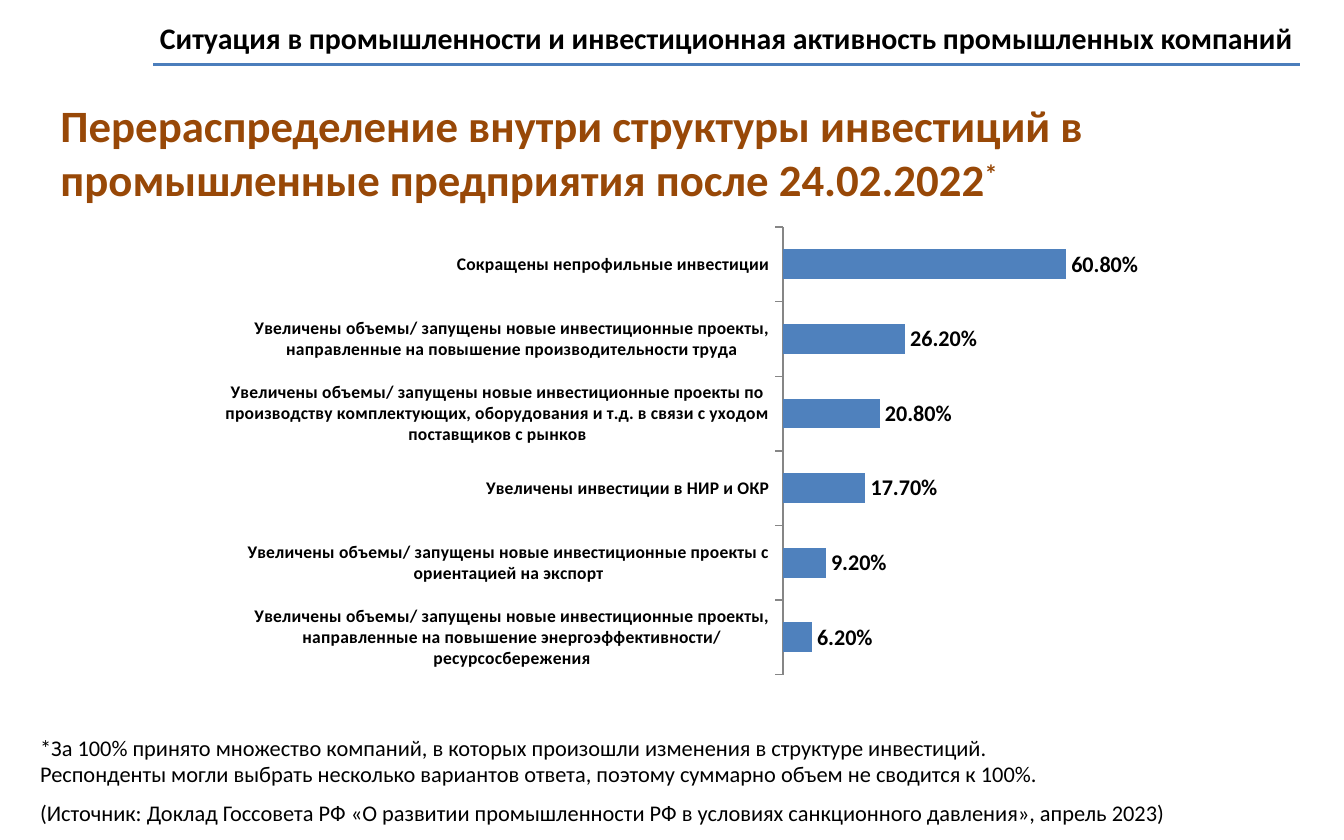
import lxml.etree
import pptx
import pptx.chart.data
import pptx.dml.color
import pptx.enum.chart
import pptx.enum.shapes
import pptx.enum.text
import pptx.oxml.ns
import pptx.util

PX = pptx.util.Inches(1) // 100
FONT = "Calibri"
BLACK = "000000"
BLUE = "4F81BD"
LINE_BLUE = "4B7EBC"
BROWN = "984807"
AXIS_GREY = "868686"
LEFT = pptx.enum.text.PP_ALIGN.LEFT
RIGHT = pptx.enum.text.PP_ALIGN.RIGHT

CHART_ROWS = [
    ("Сокращены непрофильные инвестиции", 0.608),
    ("Увеличены объемы/ запущены новые инвестиционные проекты, "
     "направленные на повышение производительности труда", 0.262),
    ("Увеличены объемы/ запущены новые инвестиционные проекты по "
     "производству комплектующих, оборудования и т.д. в связи с уходом "
     "поставщиков с рынков", 0.208),
    ("Увеличены инвестиции в НИР и ОКР", 0.177),
    ("Увеличены объемы/ запущены новые инвестиционные проекты с "
     "ориентацией на экспорт", 0.092),
    ("Увеличены объемы/ запущены новые инвестиционные проекты, "
     "направленные на повышение энергоэффективности/ ресурсосбережения", 0.062),
]


def emu(*lengths):
    return [length * PX for length in lengths]


def rgb(value):
    return pptx.dml.color.RGBColor.from_string(value)


def format_font(font, size, color=BLACK, bold=False):
    font.name = FONT
    font.size = pptx.util.Pt(size)
    font.bold = bold
    font.color.rgb = rgb(color)


def add_text(paragraph, text, size=12, color=BLACK, bold=False, align=LEFT,
             space_after=0, baseline=None):
    paragraph.alignment = align
    paragraph.space_after = pptx.util.Pt(space_after)
    run = paragraph.add_run()
    run.text = text
    format_font(run.font, size, color, bold)
    if baseline:
        run._r.get_or_add_rPr().set("baseline", str(baseline * 1000))


def add_text_box(slide, box):
    frame = slide.shapes.add_textbox(*emu(*box)).text_frame
    frame.word_wrap = True
    return frame


def place_title(slide, box):
    title = slide.shapes.title
    title.left, title.top, title.width, title.height = emu(*box)
    frame = title.text_frame
    frame.word_wrap = True
    frame.auto_size = pptx.enum.text.MSO_AUTO_SIZE.NONE
    frame.vertical_anchor = pptx.enum.text.MSO_ANCHOR.TOP
    paragraph = frame.paragraphs[0]
    add_text(paragraph, "Перераспределение внутри структуры инвестиций в "
             "промышленные предприятия после 24.02.2022",
             size=24, color=BROWN, bold=True)
    add_text(paragraph, "*", size=24, color=BROWN, bold=True, baseline=30)


def add_header(slide, box):
    left, top, width, height = box
    frame = add_text_box(slide, box)
    add_text(frame.paragraphs[0], "Ситуация в промышленности и инвестиционная "
             "активность промышленных компаний", size=16, bold=True, align=RIGHT)
    rule = slide.shapes.add_connector(
        pptx.enum.shapes.MSO_CONNECTOR.STRAIGHT,
        *emu(left + 8, top + 38, left + width - 5, top + 38))
    rule.line.color.rgb = rgb(LINE_BLUE)
    rule.line.width = pptx.util.Pt(1.25)
    lxml.etree.SubElement(rule._element.spPr, pptx.oxml.ns.qn("a:effectLst"))


def add_footnote(slide, box):
    frame = add_text_box(slide, box)
    lines = [
        ("*За 100% принято множество компаний, в которых произошли изменения "
         "в структуре инвестиций.", 0),
        ("Респонденты могли выбрать несколько вариантов ответа, поэтому "
         "суммарно объем не сводится к 100%.", 6),
        ("(Источник: Доклад Госсовета РФ «О развитии промышленности РФ в "
         "условиях санкционного давления», апрель 2023)", 0),
    ]
    for index, (text, space_after) in enumerate(lines):
        paragraph = frame.add_paragraph() if index else frame.paragraphs[0]
        add_text(paragraph, text, space_after=space_after)


def add_investment_chart(slide, box):
    categories, values = zip(*CHART_ROWS)
    data = pptx.chart.data.CategoryChartData(number_format="0.00%")
    data.categories = categories
    data.add_series("Series 1", values)
    chart = slide.shapes.add_chart(
        pptx.enum.chart.XL_CHART_TYPE.BAR_CLUSTERED, *emu(*box), data).chart
    chart.has_legend = False
    chart.has_title = False
    format_font(chart.font, 10)

    category_axis = chart.category_axis
    category_axis.reverse_order = True
    category_axis.has_major_gridlines = False
    category_axis.major_tick_mark = pptx.enum.chart.XL_TICK_MARK.OUTSIDE
    category_axis.format.line.color.rgb = rgb(AXIS_GREY)
    category_axis.format.line.width = pptx.util.Pt(0.75)
    format_font(category_axis.tick_labels.font, 9.5, bold=True)
    chart.value_axis.has_major_gridlines = False
    chart.value_axis.visible = False

    plot = chart.plots[0]
    plot.gap_width = 150
    plot.vary_by_categories = False
    series = plot.series[0]
    series.format.fill.solid()
    series.format.fill.fore_color.rgb = rgb(BLUE)
    labels = series.data_labels
    labels.show_value = True
    labels.number_format = "0.00%"
    labels.number_format_is_linked = False
    labels.position = pptx.enum.chart.XL_LABEL_POSITION.OUTSIDE_END
    format_font(labels.font, 12, bold=True)


def main():
    presentation = pptx.Presentation()
    presentation.slide_width, presentation.slide_height = emu(1000, 625)
    slide = presentation.slides.add_slide(presentation.slide_layouts[5])
    place_title(slide, (35, 68, 913, 520))
    add_header(slide, (106, 10, 866, 64))
    add_footnote(slide, (20, 541, 953, 79))
    add_investment_chart(slide, (154, 162, 693, 347))
    presentation.save("out.pptx")


if __name__ == "__main__":
    main()
